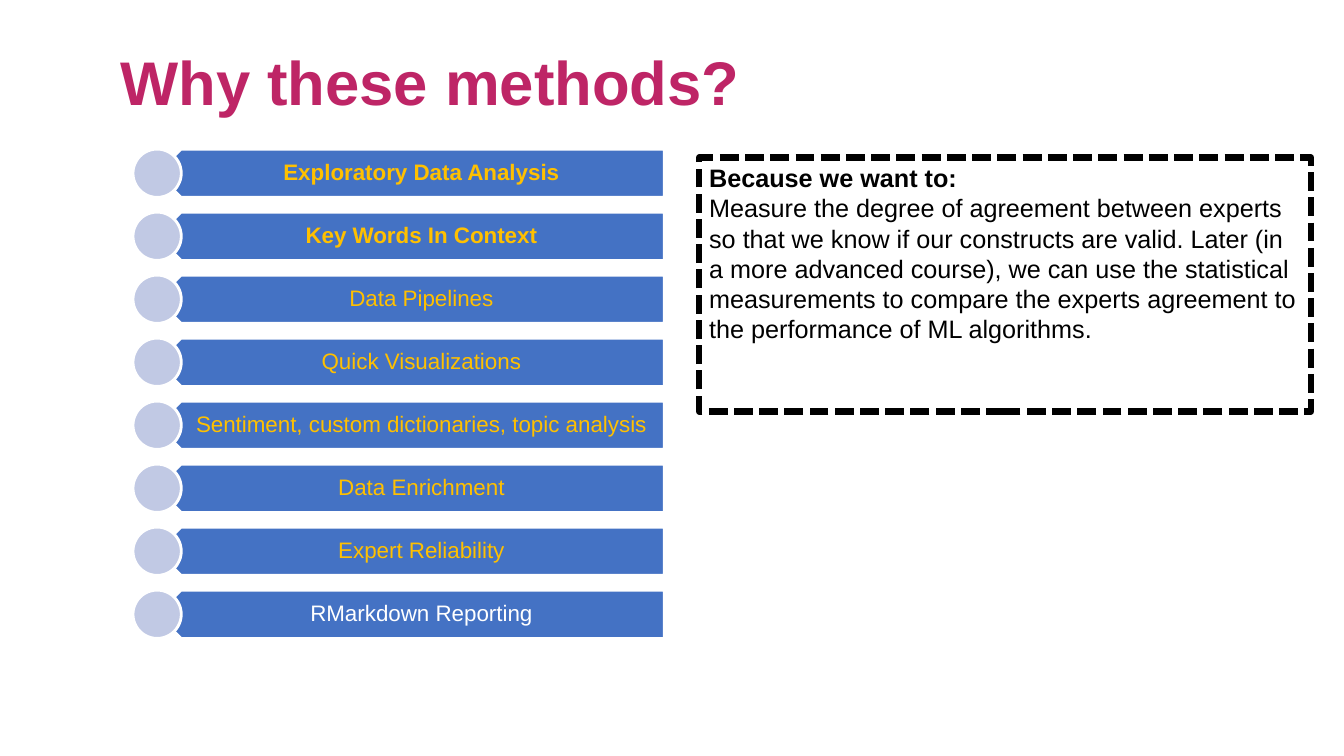
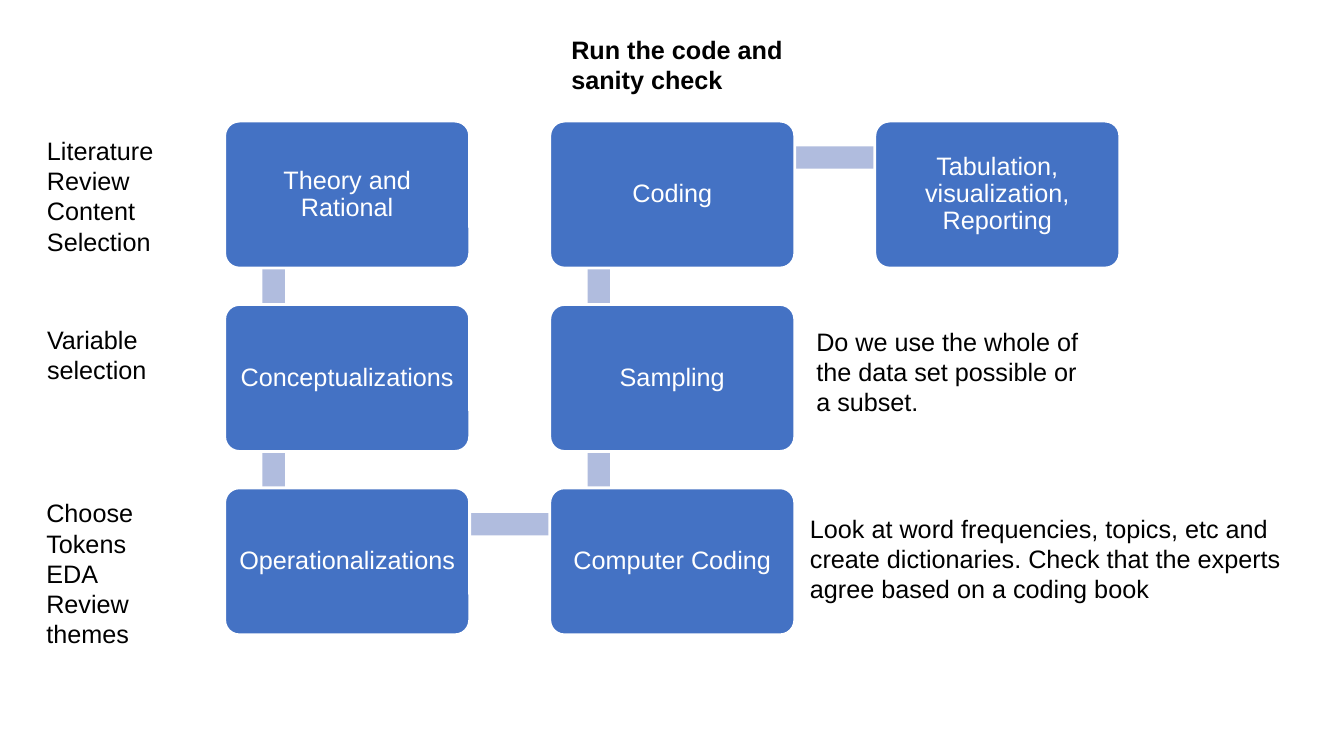
import pptx
import pptx.dml.color
import pptx.enum.dml
import pptx.enum.shapes
import pptx.enum.text
import pptx.util

Pt = pptx.util.Pt
SHAPE = pptx.enum.shapes.MSO_SHAPE
ALIGN = pptx.enum.text.PP_ALIGN
ANCHOR = pptx.enum.text.MSO_ANCHOR

FONT = "Arial"
BLACK, WHITE = "000000", "FFFFFF"
BLUE, GOLD, MAGENTA = "4472C4", "FFC000", "BE2566"
PALE_BLUE, LINK_BLUE = "C1C9E4", "B0BCDE"

METHODS = [
    "Exploratory Data Analysis",
    "Key Words In Context",
    "Data Pipelines",
    "Quick Visualizations",
    "Sentiment, custom dictionaries, topic analysis",
    "Data Enrichment",
    "Expert Reliability",
    "RMarkdown Reporting",
]
REASON = (
    "Measure the degree of agreement between experts so that we know if our "
    "constructs are valid. Later (in a more advanced course), we can use the "
    "statistical measurements to compare the experts agreement to the "
    "performance of ML algorithms."
)

# Each step in reading order: label, column, row
STEPS = [
    ("Theory and Rational", 0, 0),
    ("Conceptualizations", 0, 1),
    ("Operationalizations", 0, 2),
    ("Computer Coding", 1, 2),
    ("Sampling", 1, 1),
    ("Coding", 1, 0),
    ("Tabulation, visualization, Reporting", 2, 0),
]
# Each note: text, left, top, width, height, bold
NOTES = [
    ("Literature Review\nContent Selection", 26.5, 93, 128, 94, False),
    ("Variable selection", 26.5, 228, 148, 72, False),
    ("Choose Tokens\nEDA\nReview themes", 26, 352, 129, 117, False),
    ("Look at word frequencies, topics, etc and create dictionaries. "
     "Check that the experts agree based on a coding book", 571.5, 363, 388, 72, False),
    ("Do we use the whole of the data set possible or a subset.",
     576, 229.5, 202, 72, False),
    ("Run the code and sanity check", 401, 21, 171, 60, True),
]


def rgb(value):
    return pptx.dml.color.RGBColor.from_string(value)


def write(frame, text, size=18, color=BLACK, bold=False, align=ALIGN.LEFT, spacing=1.0):
    """Append each line of text to the frame as a paragraph."""
    for line in text.split("\n"):
        para = frame.add_paragraph() if frame.text else frame.paragraphs[0]
        para.alignment = align
        para.line_spacing = spacing
        span = para.add_run()
        span.text = line
        span.font.name = FONT
        span.font.size = Pt(size)
        span.font.bold = bold
        span.font.color.rgb = rgb(color)


def set_frame(frame, anchor=ANCHOR.TOP, insets=(7.2, 3.6, 7.2, 3.6)):
    frame.word_wrap = True
    frame.auto_size = pptx.enum.text.MSO_AUTO_SIZE.NONE
    frame.vertical_anchor = anchor
    left, top, right, bottom = insets
    frame.margin_left, frame.margin_top = Pt(left), Pt(top)
    frame.margin_right, frame.margin_bottom = Pt(right), Pt(bottom)
    return frame


def add_title(page, text):
    title = page.shapes.title
    title.left, title.top, title.width, title.height = Pt(86), Pt(0), Pt(828), Pt(88.5)
    frame = set_frame(title.text_frame, ANCHOR.BOTTOM, (0, 3.6, 7.2, 3.6))
    write(frame, text, size=44, color=MAGENTA, bold=True, spacing=0.9)


def add_shape(page, kind, left, top, width, height, fill, line=None, weight=2):
    shape = page.shapes.add_shape(kind, Pt(left), Pt(top), Pt(width), Pt(height))
    shape.shadow.inherit = False
    shape.fill.solid()
    shape.fill.fore_color.rgb = rgb(fill)
    if line:
        shape.line.color.rgb = rgb(line)
        shape.line.width = Pt(weight)
    else:
        shape.line.fill.background()
    return shape


def add_text(page, text, left, top, width, height,
             anchor=ANCHOR.TOP, insets=(7.2, 3.6, 7.2, 3.6), **style):
    box = page.shapes.add_textbox(Pt(left), Pt(top), Pt(width), Pt(height))
    write(set_frame(box.text_frame, anchor, insets), text, **style)


def add_method(page, text, top, color, bold):
    """Add a bar that points left, its label and the disc over its tip."""
    height = 34.5
    bar = add_shape(page, SHAPE.PENTAGON, 112, top, 362.5, height, BLUE, WHITE)
    bar.rotation = 180
    add_text(page, text, 121, top, 353.5, height, ANCHOR.MIDDLE, (15, 5, 8.5, 5),
             size=16, color=color, bold=bold, align=ALIGN.CENTER, spacing=0.9)
    add_shape(page, SHAPE.OVAL, 95, top, height, height, PALE_BLUE, WHITE)


def add_panel(page, heading, text):
    panel = add_shape(page, SHAPE.RECTANGLE, 499.5, 112.5, 437, 181.5, WHITE, BLACK, 4.5)
    panel.line.dash_style = pptx.enum.dml.MSO_LINE.SQUARE_DOT
    frame = set_frame(panel.text_frame)
    write(frame, heading, bold=True)
    write(frame, text)


def step_corner(column, row):
    return 160.5 + 232.2 * column, 86.5 + 131 * row


def add_link(page, start, end):
    """Add a thick bar between the joints of two neighbouring steps."""
    thickness = 16
    (left, top), (right, bottom) = (
        step_corner(pick(start[0], end[0]), pick(start[1], end[1])) for pick in (min, max))
    joint_x, joint_y = left + 35, top + 26
    if start[0] == end[0]:
        area = (joint_x - thickness / 2, joint_y, thickness, bottom - top)
    else:
        area = (joint_x, joint_y - thickness / 2, right - left, thickness)
    add_shape(page, SHAPE.RECTANGLE, *area, LINK_BLUE)


def add_step(page, text, column, row):
    step = add_shape(page, SHAPE.ROUNDED_RECTANGLE, *step_corner(column, row),
                     175, 105, BLUE, WHITE)
    step.adjustments[0] = 0.1
    frame = set_frame(step.text_frame, ANCHOR.MIDDLE, (5, 5, 5, 5))
    write(frame, text, color=WHITE, align=ALIGN.CENTER, spacing=0.9)


def build_methods(deck):
    page = deck.slides.add_slide(deck.slide_layouts[5])
    add_title(page, "Why these methods?")
    for index, method in enumerate(METHODS):
        color = WHITE if method == METHODS[-1] else GOLD
        add_method(page, method, 106.5 + 45 * index, color, bold=index < 2)
    add_panel(page, "Because we want to:", REASON)


def build_process(deck):
    page = deck.slides.add_slide(deck.slide_layouts[6])
    for start, end in zip(STEPS, STEPS[1:]):
        add_link(page, start[1:], end[1:])
    for step in STEPS:
        add_step(page, *step)
    for text, left, top, width, height, bold in NOTES:
        add_text(page, text, left, top, width, height, bold=bold)


def main():
    deck = pptx.Presentation()
    deck.slide_width, deck.slide_height = Pt(960), Pt(540)
    build_methods(deck)
    build_process(deck)
    deck.save("out.pptx")


if __name__ == "__main__":
    main()
